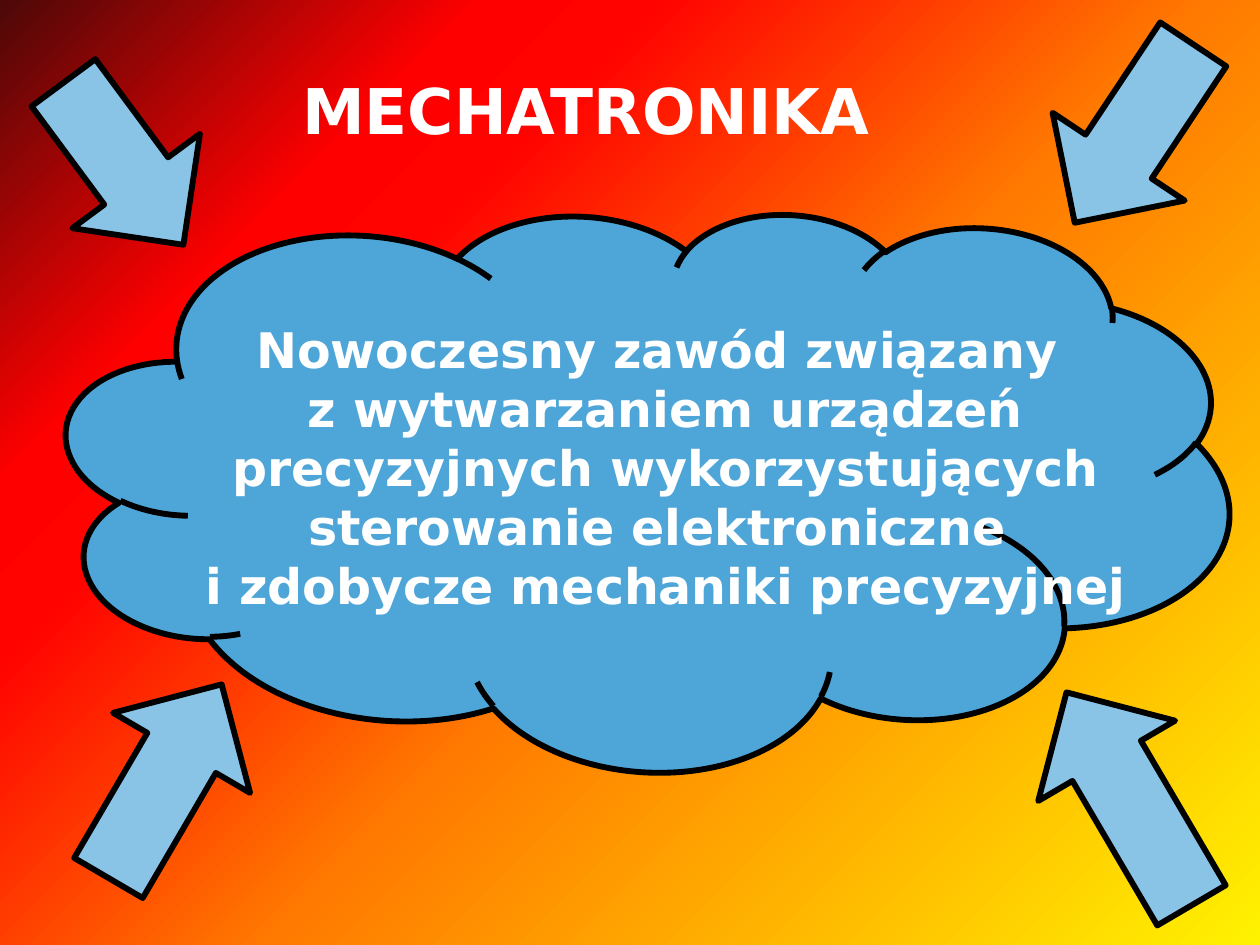
from dataclasses import dataclass

from lxml.etree import SubElement
from pptx import Presentation
from pptx.dml.color import RGBColor
from pptx.enum.shapes import MSO_SHAPE
from pptx.enum.text import PP_ALIGN
from pptx.oxml.ns import qn
from pptx.util import Inches, Pt


@dataclass(frozen=True)
class Theme:
    font: str = "DejaVu Sans"
    text: str = "FFFFFF"
    outline: str = "000000"
    cloud: str = "4EA5D8"
    arrow: str = "89C3E5"
    outline_width: float = 3.35
    title_size: int = 36
    body_size: int = 28
    gradient: tuple = ((0, "FFF200"), (45, "FF7A00"), (70, "FF0300"),
                       (78, "FF0000"), (100, "4D0808"))


theme = Theme()


def add_outlined_shape(kind, bounds, rotation, color):
    shape = page.shapes.add_shape(kind, *map(Inches, bounds))
    shape.rotation = rotation
    shape.shadow.inherit = False
    shape.fill.solid()
    shape.fill.fore_color.rgb = RGBColor.from_string(color)
    shape.line.color.rgb = RGBColor.from_string(theme.outline)
    shape.line.width = Pt(theme.outline_width)


def add_centred_text(bounds, text, size):
    box = page.shapes.add_textbox(*map(Inches, bounds))
    box.text_frame.word_wrap = True
    para = box.text_frame.paragraphs[0]
    para.text = text
    para.alignment = PP_ALIGN.CENTER
    for span in para.runs:
        span.font.name = theme.font
        span.font.size = Pt(size)
        span.font.bold = True
        span.font.color.rgb = RGBColor.from_string(theme.text)


deck = Presentation()
deck.slide_width, deck.slide_height = Inches(10), Inches(7.5)
page = deck.slides.add_slide(deck.slide_layouts[6])

# Background: yellow at the bottom right, dark red at the top left
background = page.background.fill
background.gradient()
background.gradient_angle = 135
stop_list = next(page.element.iter(qn("a:gsLst")))
for stop in list(stop_list):
    stop_list.remove(stop)
for position, color in theme.gradient:
    stop = SubElement(stop_list, qn("a:gs"), pos=str(position * 1000))
    SubElement(stop, qn("a:srgbClr"), val=color)

# Cloud with the definition
add_outlined_shape(MSO_SHAPE.CLOUD, (0.51, 1.62, 9.25, 4.49), 3.9, theme.cloud)
add_centred_text(
    (1.46, 2.49, 7.64, 2.46),
    "Nowoczesny zawód związany \v"
    "z wytwarzaniem urządzeń precyzyjnych wykorzystujących "
    "sterowanie elektroniczne \v"
    "i zdobycze mechaniki precyzyjnej",
    theme.body_size,
)

# Arrows pointing at the cloud: left, top, height, rotation
arrow_width = 1.26
arrows = (
    (0.35, 0.5, 1.6, 323.5),
    (8.33, 5.36, 1.96, 149.6),
    (0.68, 5.31, 1.78, 210.3),
    (8.37, 0.21, 1.7, 33.6),
)
for left, top, height, rotation in arrows:
    add_outlined_shape(MSO_SHAPE.DOWN_ARROW, (left, top, arrow_width, height),
                       rotation, theme.arrow)

add_centred_text((2.01, 0.52, 5.28, 0.71), "MECHATRONIKA", theme.title_size)

deck.save("out.pptx")
